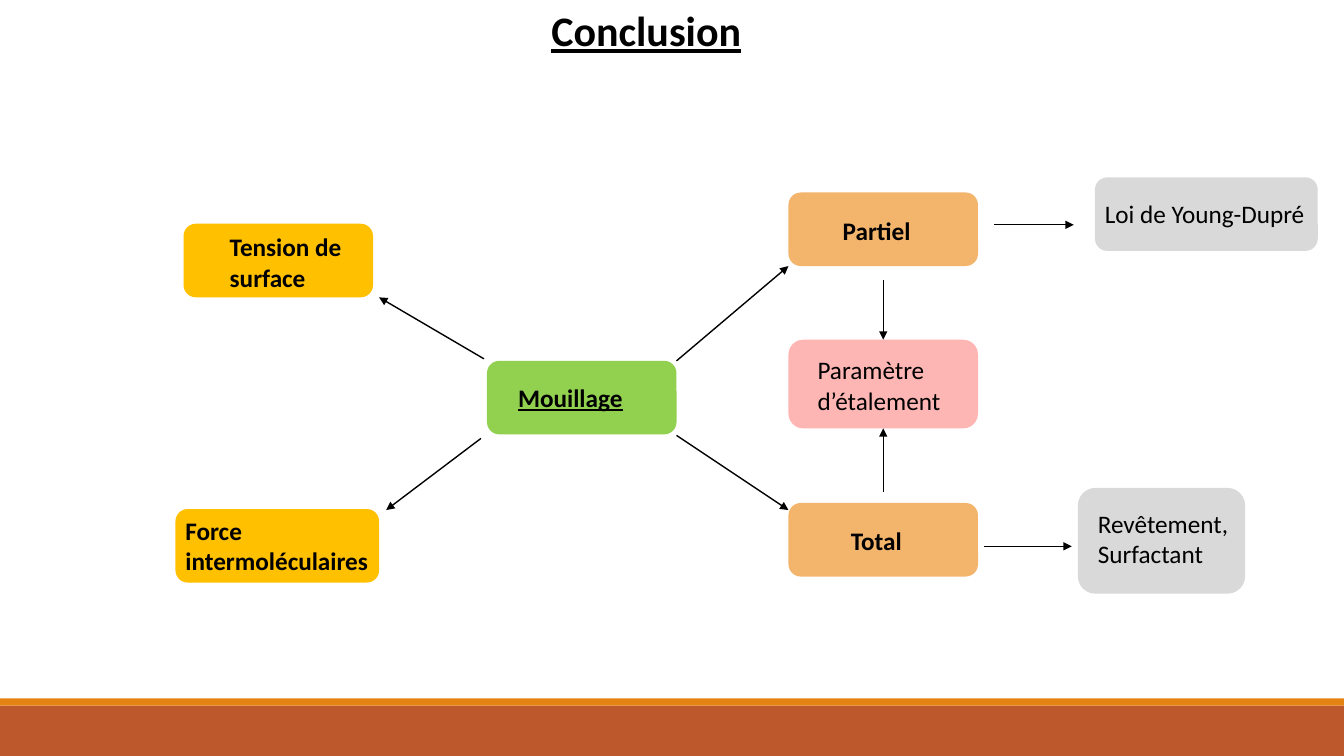
"""Builds the conclusion slide: a concept map around wetting (mouillage)."""
from lxml import etree
from pptx import Presentation
from pptx.dml.color import RGBColor
from pptx.enum.shapes import MSO_CONNECTOR as CONN, MSO_SHAPE as SHAPE
from pptx.oxml.ns import qn
from pptx.util import Inches, Pt


def add_box(kind, x, y, w, h, color):
    sp = s.shapes.add_shape(kind, Inches(x), Inches(y), Inches(w), Inches(h))
    sp.shadow.inherit = False
    sp.fill.solid()
    sp.fill.fore_color.rgb = RGBColor.from_string(color)
    sp.line.fill.background()
    return sp


def add_label(text, x, y, w, h, size=18, bold=False, underline=False):
    tf = s.shapes.add_textbox(Inches(x), Inches(y), Inches(w), Inches(h)).text_frame
    tf.word_wrap = True
    tf.text = text
    for p in tf.paragraphs:
        for r in p.runs:
            r.font.name = "Calibri"
            r.font.size = Pt(size)
            r.font.bold = bold
            r.font.underline = underline
            r.font.color.rgb = RGBColor.from_string("000000")


prs = Presentation()
prs.slide_width, prs.slide_height = Inches(13.33), Inches(7.5)
s = prs.slides.add_slide(prs.slide_layouts[6])

add_box(SHAPE.RECTANGLE, 0, 7, 13.33, 0.5, "BD582C")
add_box(SHAPE.RECTANGLE, 0, 6.93, 13.33, 0.07, "E48312")
add_label("Conclusion", 5.37, 0, 4.12, 0.61, size=30, bold=True, underline=True)

boxes = {}
for name, x, y, w, h, color in [
    ("partiel", 7.82, 1.91, 1.88, 0.73, "F3B56C"),
    ("mouillage", 4.83, 3.58, 1.88, 0.73, "92D050"),
    ("total", 7.82, 4.99, 1.88, 0.73, "F3B56C"),
    ("loi", 10.86, 1.76, 2.21, 0.73, "D9D9D9"),
    ("revêtement", 10.69, 4.84, 1.66, 1.05, "D9D9D9"),
    ("paramètre", 7.82, 3.37, 1.88, 0.88, "FEB6B4"),
    ("force", 1.74, 5.05, 2.02, 0.73, "FFC000"),
    ("tension", 1.82, 2.22, 1.88, 0.73, "FFC000"),
]:
    boxes[name] = add_box(SHAPE.ROUNDED_RECTANGLE, x, y, w, h, color)

for text, x, y, w, h, bold, underline in [
    ("Partiel", 8.26, 2.09, 2.09, 0.4, True, False),
    ("Mouillage", 5.04, 3.74, 1.6, 0.4, True, True),
    ("Total", 8.34, 5.16, 2.09, 0.4, True, False),
    ("Loi de Young-Dupré", 10.86, 1.92, 2.35, 0.4, False, False),
    ("Revêtement,\nSurfactant", 10.79, 4.99, 2.35, 0.71, False, False),
    ("Paramètre d’étalement", 8.01, 3.47, 2.09, 0.71, False, False),
    ("Tension de surface", 2.18, 2.25, 2.09, 0.71, True, False),
    ("Force intermoléculaires", 1.74, 5.06, 2.21, 0.71, True, False),
]:
    add_label(text, x, y, w, h, bold=bold, underline=underline)

for x1, y1, x2, y2, side in [
    (6.71, 3.58, 7.82, 2.64, None),
    (6.71, 4.32, 7.82, 5.06, None),
    (4.8, 3.56, 3.76, 2.95, None),
    (4.77, 4.35, 3.83, 5.06, None),
    (9.86, 2.23, 10.65, 2.23, None),
    (9.76, 5.42, 10.63, 5.42, None),
    (8.76, 2.78, 8.76, 3.37, 0),
    (8.76, 4.88, 8.76, 4.25, 2),
]:
    arrow = s.shapes.add_connector(CONN.STRAIGHT, Inches(x1), Inches(y1), Inches(x2), Inches(y2))
    if side is not None:
        arrow.end_connect(boxes["paramètre"], side)
    arrow.line.color.rgb = RGBColor.from_string("000000")
    arrow.line.width = Pt(1)
    etree.SubElement(arrow.line._get_or_add_ln(), qn("a:tailEnd"), type="triangle")
    etree.SubElement(arrow._element.spPr, qn("a:effectLst"))

prs.save("out.pptx")
